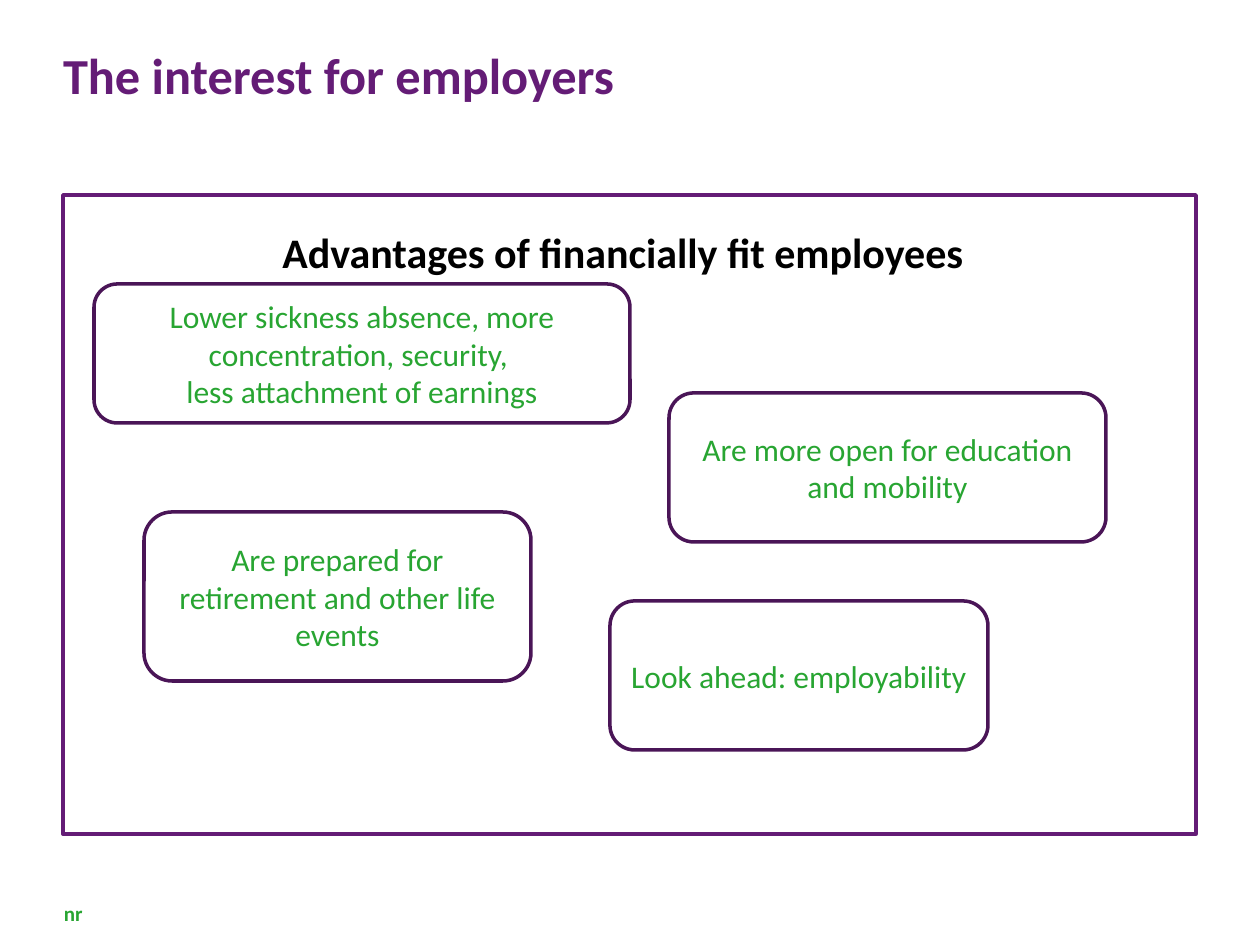
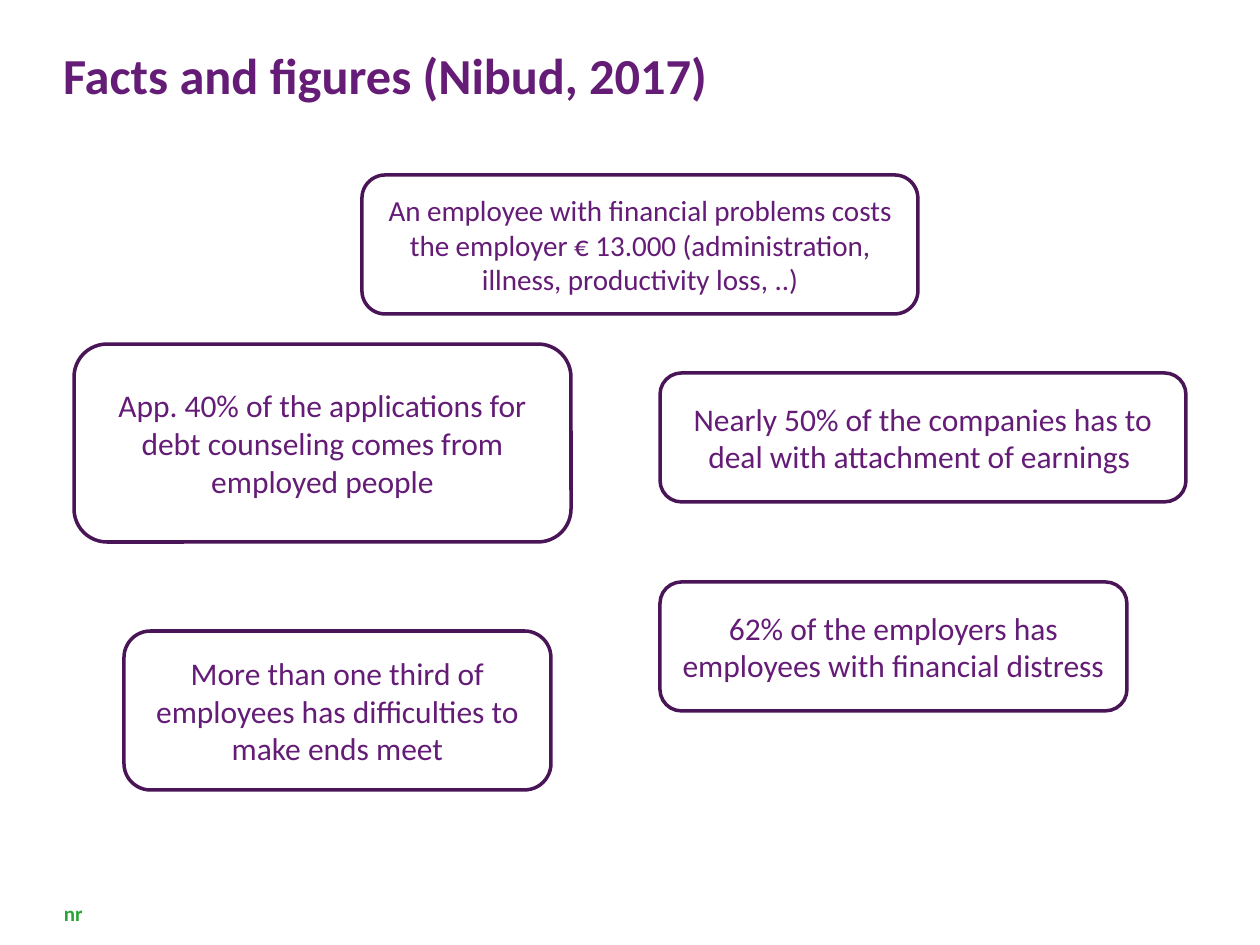
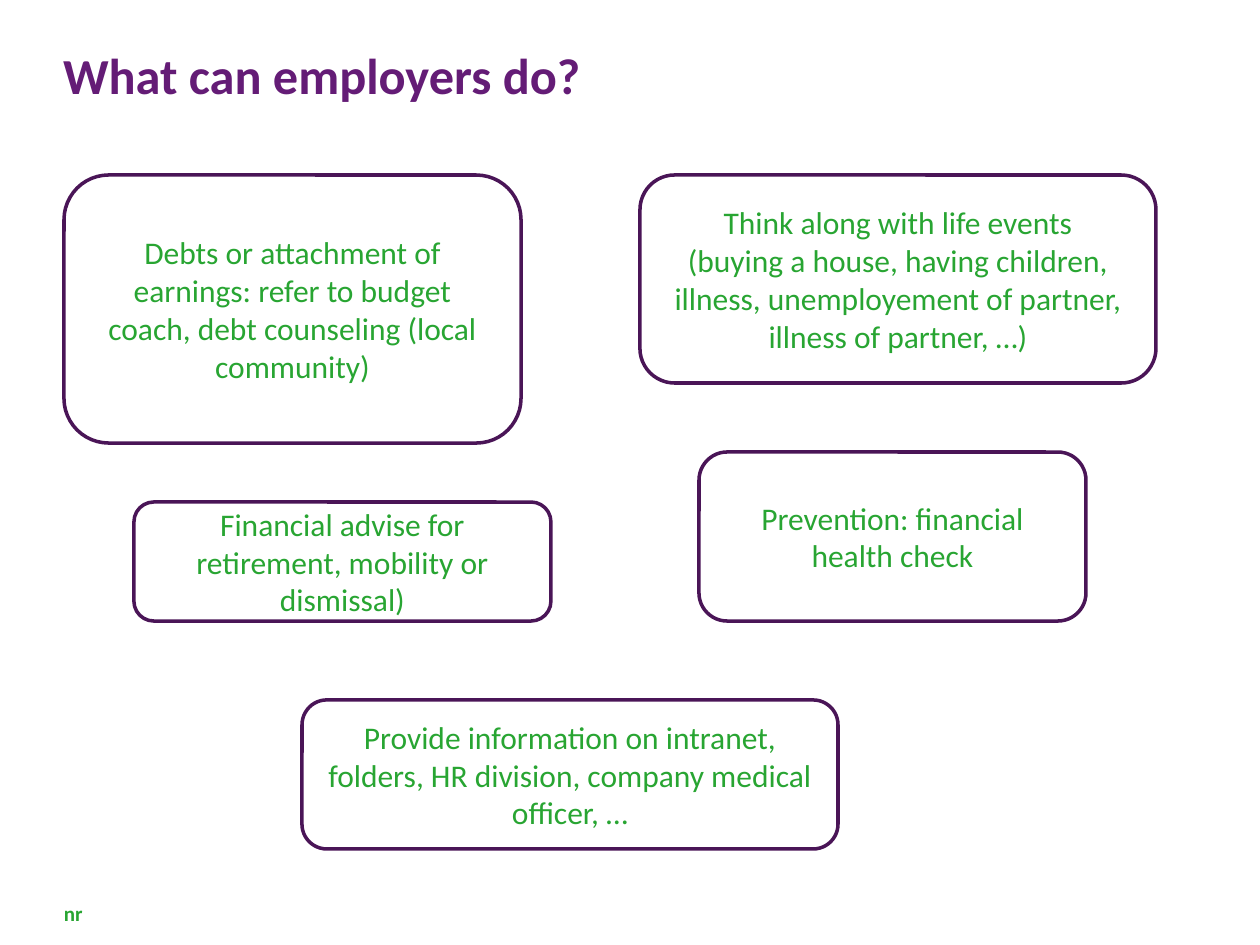
from pptx import Presentation
from pptx import util as u
from pptx.dml.color import RGBColor
from pptx.enum import shapes, text
from pptx.oxml.ns import qn
from lxml import etree

PURPLE = RGBColor(0x64, 0x1C, 0x76)
DARK_PURPLE = RGBColor(0x4A, 0x15, 0x57)
GREEN = RGBColor(0x28, 0xA5, 0x32)
BLACK = RGBColor(0, 0, 0)
WHITE = RGBColor(0xFF, 0xFF, 0xFF)

PX_PER_INCH = 126
TITLE_ONLY, TITLE_AND_BODY = 5, 1


def px(length):
    return u.Emu(round(length * 914400 / PX_PER_INCH))


class SlideBuilder:
    """Holds the shared style and the current slide."""

    font_name = "Calibri"
    line_width = u.Pt(2)
    flush_left = {"margin_left": 0, "margin_right": px(13),
                  "margin_top": px(6), "margin_bottom": px(6),
                  "word_wrap": True, "auto_size": text.MSO_AUTO_SIZE.NONE}

    def __init__(self, deck):
        self.deck = deck
        self.page = None

    def place(self, box, area):
        for name, length in zip(("left", "top", "width", "height"), area):
            setattr(box, name, px(length))

    def outline(self, box, color):
        box.fill.solid()
        box.fill.fore_color.rgb = WHITE
        box.line.color.rgb = color
        box.line.width = self.line_width

    def add_lines(self, box, lines, size, color, bold=False,
                  align=text.PP_ALIGN.LEFT, **frame_format):
        frame = box.text_frame
        for name, value in frame_format.items():
            setattr(frame, name, value)
        for index, line in enumerate(lines):
            para = frame.add_paragraph() if index else frame.paragraphs[0]
            para.alignment = align
            span = para.add_run()
            span.text = line
            style = {"name": self.font_name, "size": u.Pt(size), "bold": bold}
            for name, value in style.items():
                setattr(span.font, name, value)
            span.font.color.rgb = color

    def start(self, title, layout=TITLE_ONLY):
        """Add a slide with its title and footer mark."""
        self.page = self.deck.slides.add_slide(self.deck.slide_layouts[layout])
        heading = self.page.shapes.title
        self.place(heading, (63, 38, 1134, 77))
        self.add_lines(heading, [title], 28.8, PURPLE, bold=True,
                       vertical_anchor=text.MSO_ANCHOR.TOP, **self.flush_left)
        footer = self.page.shapes.add_textbox(*map(px, (64, 888, 79, 50)))
        self.add_lines(footer, ["nr"], 12, GREEN, bold=True,
                       vertical_anchor=text.MSO_ANCHOR.MIDDLE,
                       **self.flush_left)

    def framed_body(self, area, heading):
        """Turn the body placeholder into a frame with a centred heading."""
        body = self.page.placeholders[1]
        self.place(body, area)
        self.outline(body, PURPLE)
        self.add_lines(body, [heading], 24, BLACK, bold=True,
                       align=text.PP_ALIGN.CENTER, **self.flush_left)
        para = body.text_frame.paragraphs[0]
        para.line_spacing = 1.5
        para.space_before = u.Pt(0)
        properties = para._p.get_or_add_pPr()
        properties.set("marL", "0")
        properties.set("indent", "0")
        etree.SubElement(properties, qn("a:buNone"))

    def card(self, area, *lines, color=GREEN, size=18):
        box = self.page.shapes.add_shape(
            shapes.MSO_SHAPE.ROUNDED_RECTANGLE, *map(px, area))
        box.shadow.inherit = False
        self.outline(box, DARK_PURPLE)
        self.add_lines(box, lines, size, color, align=text.PP_ALIGN.CENTER,
                       word_wrap=True, vertical_anchor=text.MSO_ANCHOR.MIDDLE)


def employer_interest(builder):
    builder.start("The interest for employers", TITLE_AND_BODY)
    builder.framed_body((63, 195, 1133, 639),
                        "Advantages of financially fit employees")
    builder.card((94, 284, 536, 139),
                 "Lower sickness absence, more concentration, security, ",
                 "less attachment of earnings")
    builder.card((669, 393, 437, 149),
                 "Are more open for education and mobility")
    builder.card((144, 512, 387, 169),
                 "Are prepared for retirement and other life events")
    builder.card((610, 601, 378, 149), "Look ahead: employability")


def facts_and_figures(builder):
    builder.start("Facts and figures (Nibud, 2017)")
    facts = [
        ((660, 582, 467, 129), 18,
         "62% of the employers has employees with financial distress"),
        ((660, 373, 526, 129), 18,
         "Nearly 50% of the companies has to deal with attachment of earnings "),
        ((362, 175, 556, 139), 16.6,
         "An employee with financial problems costs the employer € 13.000 "
         "(administration, illness, productivity loss, ..)"),
        ((124, 631, 427, 159), 18,
         "More than one third of employees has difficulties to make ends meet"),
        ((74, 344, 497, 198), 18,
         "App. 40% of the applications for debt counseling comes from "
         "employed people"),
    ]
    for area, size, fact in facts:
        builder.card(area, fact, color=PURPLE, size=size)


def employer_actions(builder):
    builder.start("What can employers do?")
    builder.card((699, 452, 387, 169), "Prevention: financial health check")
    builder.card((640, 175, 516, 208), "Think along with life events",
                 "(buying a house, having children, illness, unemployement of "
                 "partner, illness of partner, …)")
    builder.card((64, 175, 457, 268),
                 "Debts or attachment of earnings: refer to budget coach, "
                 "debt counseling (local community)")
    builder.card((134, 502, 417, 119),
                 "Financial advise for retirement, mobility or dismissal)")
    builder.card((302, 700, 536, 149),
                 "Provide information on intranet, folders, HR division, "
                 "company medical officer, …")


def main():
    deck = Presentation()
    deck.slide_width, deck.slide_height = u.Inches(10), u.Inches(7.5)
    builder = SlideBuilder(deck)
    for build in (employer_interest, facts_and_figures, employer_actions):
        build(builder)
    deck.save("out.pptx")


if __name__ == "__main__":
    main()
